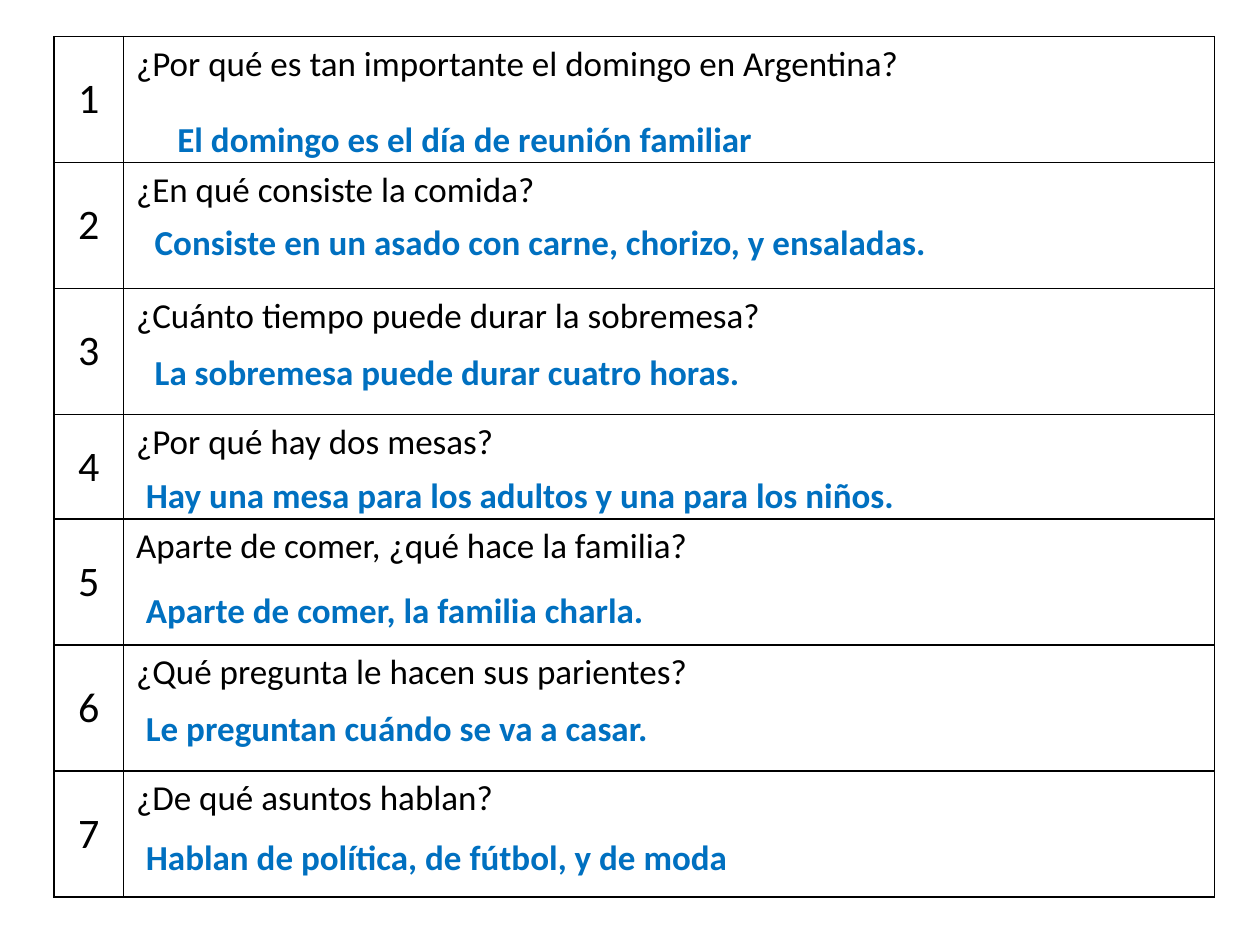
"""Build a slide with seven questions in a table and their answers."""
from lxml import etree
from pptx import Presentation
from pptx.dml.color import RGBColor
from pptx.enum.text import MSO_ANCHOR, MSO_AUTO_SIZE, PP_ALIGN
from pptx.oxml.ns import qn
from pptx.util import Inches, Pt

LEFT, CENTER = PP_ALIGN.LEFT, PP_ALIGN.CENTER
TOP, MIDDLE = MSO_ANCHOR.TOP, MSO_ANCHOR.MIDDLE
GROW = MSO_AUTO_SIZE.SHAPE_TO_FIT_TEXT
COLORS = {"text": "000000", "answer": "0070C0", "border": "000000", "cell": "FFFFFF"}

ROWS = [
    ("¿Por qué es tan importante el domingo en Argentina?",
     "El domingo es el día de reunión familiar", 1, 1.31, 0.88),
    ("¿En qué consiste la comida?",
     "Consiste en un asado con carne, chorizo, y ensaladas.", 1, 1.13, 1.7),
    ("¿Cuánto tiempo puede durar la sobremesa?",
     "La sobremesa puede durar cuatro horas.", 1, 1.13, 2.73),
    ("¿Por qué hay dos mesas?",
     "Hay una mesa para los adultos y una para los niños.", 0.83, 1.06, 3.71),
    ("Aparte de comer, ¿qué hace la familia?",
     "Aparte de comer, la familia charla.", 1, 1.06, 4.62),
    ("¿Qué pregunta le hacen sus parientes?",
     "Le preguntan cuándo se va a casar.", 1, 1.06, 5.56),
    ("¿De qué asuntos hablan?",
     "Hablan de política, de fútbol, y de moda", 1, 1.06, 6.58),
]
COLUMN_WIDTHS = [0.55, 8.66]


def write_text(frame, text, size=20, color="text", bold=False, align=LEFT):
    para = frame.paragraphs[0]
    para.alignment = align
    span = para.add_run()
    span.text = text
    span.font.name = "Calibri"
    span.font.size = Pt(size)
    span.font.bold = bold
    span.font.color.rgb = RGBColor.from_string(COLORS[color])


def style_cell(cell):
    properties = cell._tc.get_or_add_tcPr()
    for side in ("a:lnL", "a:lnR", "a:lnT", "a:lnB"):
        line = etree.SubElement(properties, qn(side), w=str(Pt(1)))
        fill = etree.SubElement(line, qn("a:solidFill"))
        etree.SubElement(fill, qn("a:srgbClr"), val=COLORS["border"])
    cell.fill.solid()
    cell.fill.fore_color.rgb = RGBColor.from_string(COLORS["cell"])


deck = Presentation()
deck.slide_width, deck.slide_height = Inches(10), Inches(7.5)
page = deck.slides.add_slide(deck.slide_layouts[6])

table = page.shapes.add_table(
    len(ROWS), len(COLUMN_WIDTHS), Inches(0.43), Inches(0.29),
    Inches(sum(COLUMN_WIDTHS)), Inches(sum(row[2] for row in ROWS))).table
table.first_row = False
table.horz_banding = False
for column, width in zip(table.columns, COLUMN_WIDTHS):
    column.width = Inches(width)

for index, (question, answer, height, left, top) in enumerate(ROWS):
    table.rows[index].height = Inches(height)
    number_cell, question_cell = table.cell(index, 0), table.cell(index, 1)
    style_cell(number_cell)
    style_cell(question_cell)
    number_cell.vertical_anchor = MIDDLE
    question_cell.vertical_anchor = TOP
    write_text(number_cell.text_frame, str(index + 1), size=24, align=CENTER)
    write_text(question_cell.text_frame, question)

    box = page.shapes.add_textbox(Inches(left), Inches(top), Inches(7.24), Inches(0.44))
    box.text_frame.word_wrap = True
    box.text_frame.auto_size = GROW
    write_text(box.text_frame, answer, color="answer", bold=True)

deck.save("out.pptx")
